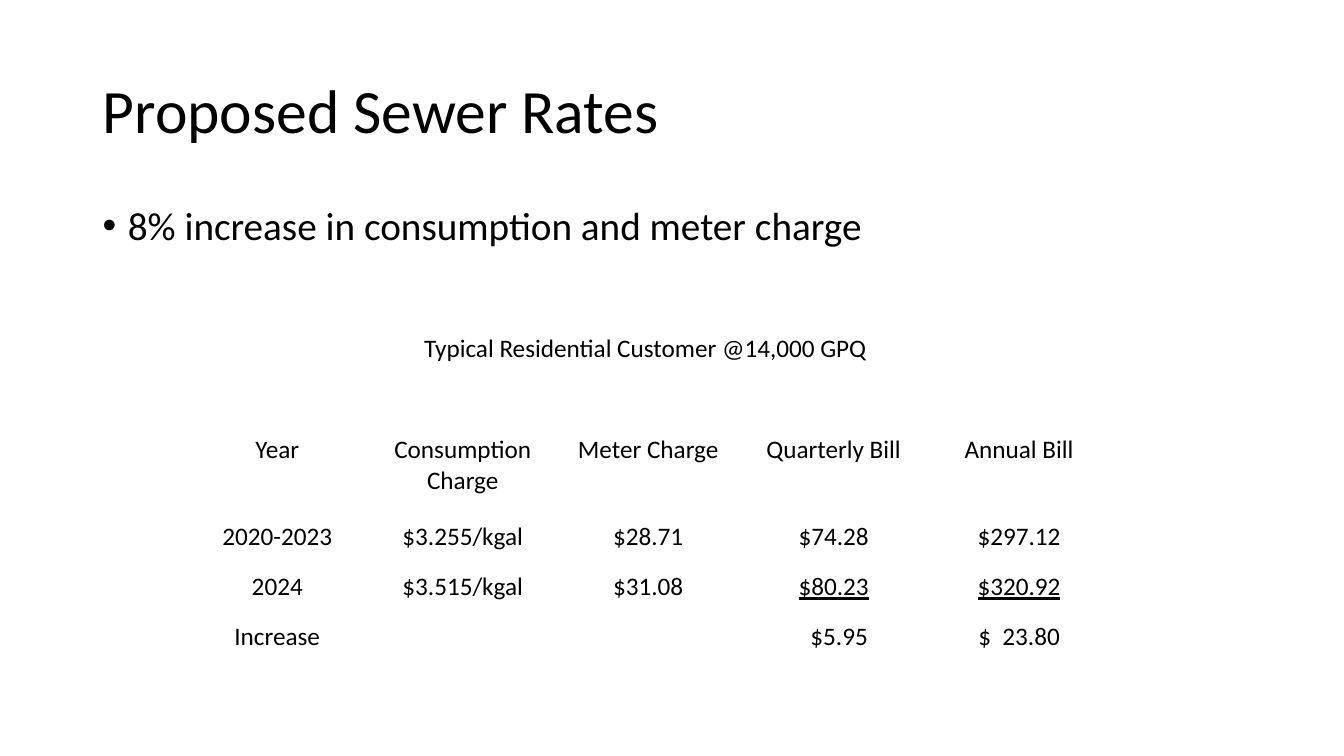
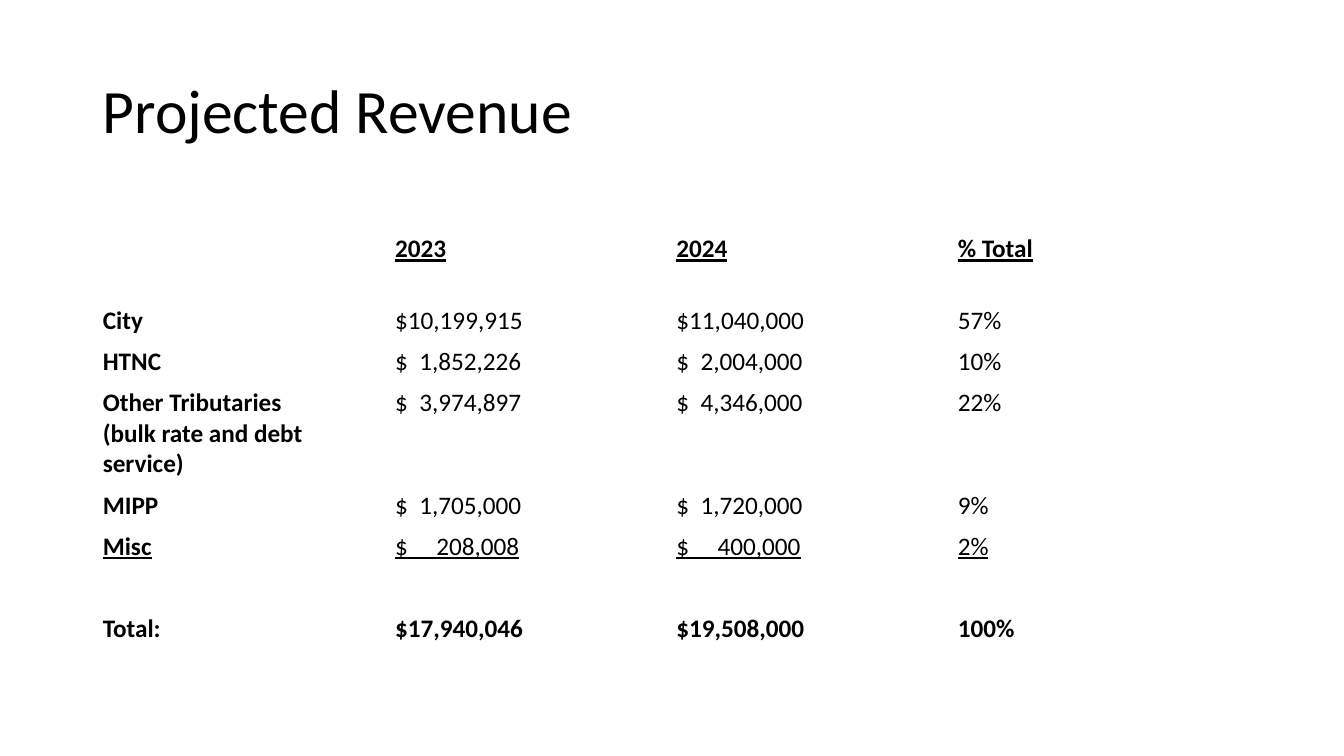
import pptx
import pptx.util
import pptx.dml.color
import pptx.enum.text
import pptx.oxml
import pptx.oxml.ns
import lxml.etree

COLORS = {"text": "000000", "paper": "FFFFFF"}
FONT = "Calibri"
PP_ALIGN = pptx.enum.text.PP_ALIGN
Inches = pptx.util.Inches

deck = pptx.Presentation()
deck.slide_width = Inches(13.33)
deck.slide_height = Inches(7.5)
W, H = deck.slide_width, deck.slide_height
LEFT, CONTENT_WIDTH = int(W * 0.069), int(W * 0.8627)


def style(paragraph, size, align=PP_ALIGN.LEFT, bold=False, underline=False):
    paragraph.alignment = align
    for run in paragraph.runs:
        run.font.name = FONT
        run.font.size = pptx.util.Pt(size)
        run.font.bold = bold
        run.font.underline = underline
        run.font.color.rgb = pptx.dml.color.RGBColor.from_string(COLORS["text"])


def add_grid(slide, left, top, columns, heights, rows, align, bold, underlined):
    grid = slide.shapes.add_table(
        len(heights), len(columns), left, top, sum(columns), sum(heights)).table
    for column, width in zip(grid.columns, columns):
        column.width = width
    for r, (height, texts) in enumerate(zip(heights, rows)):
        grid.rows[r].height = height
        for c in range(len(columns)):
            cell = grid.cell(r, c)
            cell.fill.solid()
            cell.fill.fore_color.rgb = pptx.dml.color.RGBColor.from_string(COLORS["paper"])
            cell.text_frame.text = texts[c] if c < len(texts) else ""
            for paragraph in cell.text_frame.paragraphs:
                style(paragraph, 18, align, bold(r, c), underlined(r, c))
    return grid


slides = []
for heading in ("Proposed Sewer Rates", "Projected Revenue"):
    slide = deck.slides.add_slide(deck.slide_layouts[5])
    title = slide.shapes.title
    title.left, title.top = LEFT, int(H * 0.0533)
    title.width, title.height = CONTENT_WIDTH, int(H * 0.1933)
    title.text_frame.text = heading
    title.text_frame.auto_size = pptx.enum.text.MSO_AUTO_SIZE.NONE
    title.text_frame.vertical_anchor = pptx.enum.text.MSO_ANCHOR.MIDDLE
    title.text_frame.paragraphs[0].line_spacing = 0.9
    style(title.text_frame.paragraphs[0], 44)
    slides.append(slide)
rates_slide, revenue_slide = slides

summary = rates_slide.shapes.add_textbox(LEFT, int(H * 0.2667), CONTENT_WIDTH, int(H * 0.1))
summary.text_frame.word_wrap = True
summary.text_frame.text = "8% increase in consumption and meter charge"
point = summary.text_frame.paragraphs[0]
point.line_spacing = 0.9
style(point, 28)
bullet_props = point._p.get_or_add_pPr()
bullet_props.set("marL", str(Inches(0.25)))
bullet_props.set("indent", str(-Inches(0.25)))
bullet_font = lxml.etree.SubElement(bullet_props, pptx.oxml.ns.qn("a:buFont"))
bullet_font.set("typeface", "Arial")
bullet = lxml.etree.SubElement(bullet_props, pptx.oxml.ns.qn("a:buChar"))
bullet.set("char", "•")

rate_rows = [
    ["Typical Residential Customer @14,000 GPQ "],
    [],
    ["Year", "Consumption Charge", "Meter Charge", "Quarterly Bill", "Annual Bill"],
    ["2020-2023", "$3.255/kgal", "$28.71", "$74.28", "$297.12"],
    ["2024", "$3.515/kgal", "$31.08", "$80.23", "$320.92"],
    ["Increase", "", "", "$5.95", "$  23.80"],
]
rate_row = int(H / 15)
rate_heights = [rate_row] * len(rate_rows)
rate_heights[2] = int(H * 0.1147)
rates = add_grid(
    rates_slide, int(W * 0.1373), int(H * 0.4347), [int(W * 0.138)] * 5, rate_heights,
    rate_rows, PP_ALIGN.CENTER,
    bold=lambda r, c: False,
    underlined=lambda r, c: r == 4 and c >= 3)
rates.cell(0, 0).merge(rates.cell(0, 4))
rates.cell(5, 3).margin_left = Inches(0.21)

revenue_rows = [
    ["", "2023", "2024", "% Total"],
    ["City", "$10,199,915", "$11,040,000", "57%"],
    ["HTNC", "$  1,852,226", "$  2,004,000", "10%"],
    ["Other Tributaries\n(bulk rate and debt service)", "$  3,974,897", "$  4,346,000", "22%"],
    ["MIPP", "$  1,705,000", "$  1,720,000", "9%"],
    ["Misc", "$     208,008", "$     400,000", "2%"],
    [],
    ["Total:", "$17,940,046", "$19,508,000", "100%"],
]
revenue_row = int(H * 0.054)
revenue_heights = [revenue_row] * len(revenue_rows)
revenue_heights[0] = int(H * 0.095)
revenue_heights[3] = int(H * 0.1365)
add_grid(
    revenue_slide, LEFT, int(H * 0.3027),
    [int(CONTENT_WIDTH * share) for share in (0.2522, 0.2426, 0.2426, 0.2626)],
    revenue_heights, revenue_rows, PP_ALIGN.LEFT,
    bold=lambda r, c: r in (0, 7) or c == 0,
    underlined=lambda r, c: r in (0, 5))

deck.save("out.pptx")
